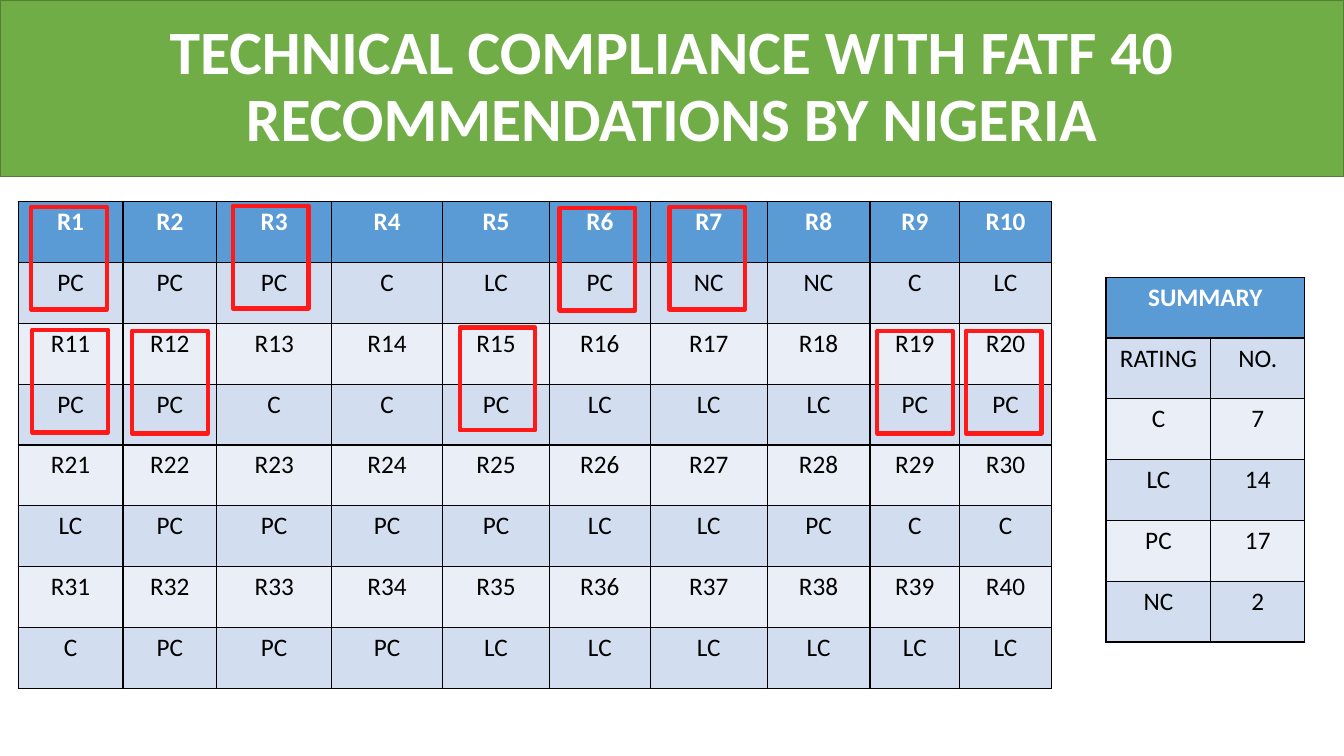
import pptx
import pptx.dml.color
import pptx.enum.shapes
import pptx.enum.text
import pptx.oxml
import pptx.oxml.ns
import pptx.util
from pptx.util import Inches

COLORS = {
    "banner": "70AD47",
    "banner_line": "538035",
    "header": "5B9BD5",
    "band_dark": "D2DEEF",
    "band_light": "EAEFF7",
    "highlight": "FF1919",
    "white": "FFFFFF",
    "black": "000000",
}
RGB = {name: pptx.dml.color.RGBColor.from_string(value) for name, value in COLORS.items()}


def write_text(text_frame, text, size=18, color="black", bold=False, line_spacing=1.0):
    paragraph = text_frame.paragraphs[0]
    paragraph.alignment = pptx.enum.text.PP_ALIGN.CENTER
    paragraph.line_spacing = line_spacing
    run = paragraph.add_run()
    run.text = text
    run.font.name = "Calibri"
    run.font.size = pptx.util.Pt(size)
    run.font.bold = bold
    run.font.color.rgb = RGB[color]


def add_banded_table(slide, rows, left, top, column_widths, height):
    """Add a table with a header row, alternating bands and black cell borders."""
    table = slide.shapes.add_table(
        len(rows), len(column_widths), Inches(left), Inches(top),
        Inches(sum(column_widths)), Inches(height),
    ).table
    for column, width in zip(table.columns, column_widths):
        column.width = Inches(width)
    for row_index, row in enumerate(rows):
        if row_index == 0:
            fill, color = "header", "white"
        else:
            fill, color = ("band_dark" if row_index % 2 else "band_light"), "black"
        for column_index in range(len(column_widths)):
            cell = table.cell(row_index, column_index)
            properties = cell._tc.get_or_add_tcPr()
            for side in ("lnL", "lnR", "lnT", "lnB"):
                properties.append(pptx.oxml.parse_xml(
                    f'<a:{side} {pptx.oxml.ns.nsdecls("a")} w="12700"><a:solidFill>'
                    f'<a:srgbClr val="{COLORS["black"]}"/></a:solidFill></a:{side}>'
                ))
            cell.fill.solid()
            cell.fill.fore_color.rgb = RGB[fill]
            if column_index < len(row):
                write_text(cell.text_frame, row[column_index], color=color, bold=row_index == 0)
        if len(row) < len(column_widths):
            table.cell(row_index, len(row) - 1).merge(
                table.cell(row_index, len(column_widths) - 1))


presentation = pptx.Presentation()
presentation.slide_width = Inches(13.33)
presentation.slide_height = Inches(7.5)
slide = presentation.slides.add_slide(presentation.slide_layouts[6])

# Title banner
banner = slide.shapes.add_shape(
    pptx.enum.shapes.MSO_SHAPE.RECTANGLE, 0, 0, Inches(13.33), Inches(1.75))
banner.shadow.inherit = False
banner.fill.solid()
banner.fill.fore_color.rgb = RGB["banner"]
banner.line.color.rgb = RGB["banner_line"]
banner.line.width = pptx.util.Pt(1)
banner.text_frame.word_wrap = True
banner.text_frame.vertical_anchor = pptx.enum.text.MSO_ANCHOR.MIDDLE
write_text(banner.text_frame, "TECHNICAL COMPLIANCE WITH FATF 40 RECOMMENDATIONS BY NIGERIA",
           size=44, color="white", bold=True, line_spacing=0.9)

# Ratings of the 40 recommendations, ten to a row
ratings = [
    "PC PC PC C LC PC NC NC C LC",
    "PC PC C C PC LC LC LC PC PC",
    "LC PC PC PC PC LC LC PC C C",
    "C PC PC PC LC LC LC LC LC LC",
]
rating_rows = []
for group, group_ratings in enumerate(ratings):
    rating_rows.append([f"R{group * 10 + number}" for number in range(1, 11)])
    rating_rows.append(group_ratings.split())
add_banded_table(slide, rating_rows, 0.18, 2,
                 [1.04, 0.93, 1.14, 1.1, 1.06, 1, 1.16, 1.02, 0.89, 0.91], 4.83)

# Summary of ratings
summary_rows = [
    ["SUMMARY"],
    ["RATING", "NO."],
    ["C", "7"],
    ["LC", "14"],
    ["PC", "17"],
    ["NC", "2"],
]
add_banded_table(slide, summary_rows, 10.97, 2.75, [1.04, 0.93], 3.62)

# Frames around the highlighted recommendations
highlights = {
    "R1": (0.31, 2.05),
    "R3": (2.31, 2.04),
    "R6": (5.55, 2.06),
    "R7": (6.64, 2.05),
    "R11": (0.32, 3.27),
    "R12": (1.31, 3.28),
    "R15": (4.56, 3.25),
    "R19": (8.7, 3.28),
    "R20": (9.58, 3.28),
}
for left, top in highlights.values():
    frame = slide.shapes.add_shape(
        pptx.enum.shapes.MSO_SHAPE.RECTANGLE,
        Inches(left), Inches(top), Inches(0.75), Inches(1.02))
    frame.shadow.inherit = False
    frame.fill.background()
    frame.line.color.rgb = RGB["highlight"]
    frame.line.width = pptx.util.Pt(3)

presentation.save("out.pptx")
